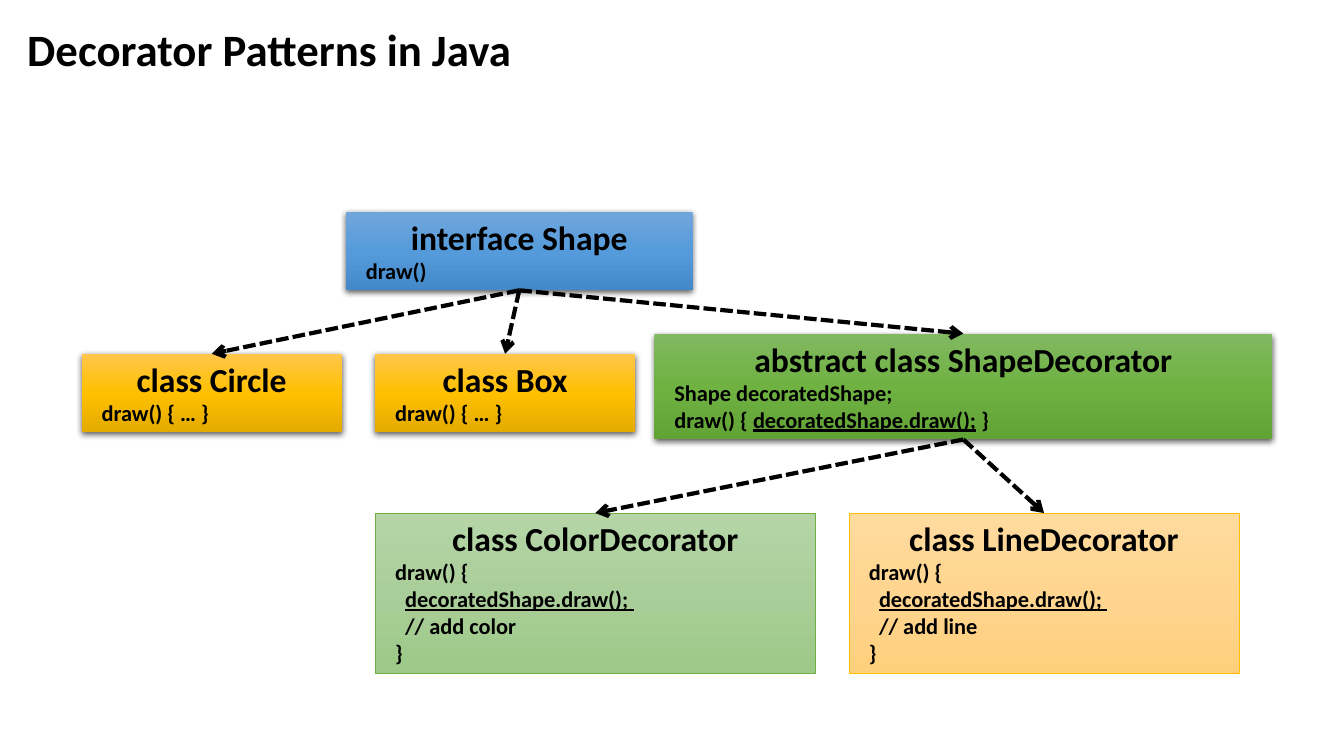
"""Build a slide with the class tree of the decorator pattern in Java."""
from copy import deepcopy

from lxml.etree import SubElement
from pptx import Presentation
from pptx.dml.color import RGBColor
from pptx.enum.dml import MSO_LINE
from pptx.enum.shapes import MSO_CONNECTOR, MSO_SHAPE
from pptx.enum.text import MSO_ANCHOR, MSO_AUTO_SIZE, PP_ALIGN
from pptx.oxml.ns import qn
from pptx.util import Inches, Pt

BLACK = RGBColor(0x00, 0x00, 0x00)
GOLD = RGBColor(0xFF, 0xC0, 0x00)
LEAF = RGBColor(0x70, 0xAD, 0x47)
BLUES = [RGBColor(0x71, 0xA6, 0xDB), RGBColor(0x55, 0x9B, 0xDB), RGBColor(0x44, 0x8A, 0xCA)]
GOLDS = [RGBColor(0xFF, 0xC6, 0x4B), GOLD, RGBColor(0xE3, 0xAB, 0x00)]
GREENS = [RGBColor(0x81, 0xB8, 0x61), RGBColor(0x6F, 0xB2, 0x42), RGBColor(0x62, 0xA3, 0x36)]
MINTS = [RGBColor(0xB5, 0xD5, 0xA7), RGBColor(0xAA, 0xCE, 0x9A), RGBColor(0x9C, 0xC9, 0x87)]
CREAMS = [RGBColor(0xFF, 0xDB, 0x9E), RGBColor(0xFF, 0xD5, 0x90), RGBColor(0xFF, 0xD0, 0x7C)]

TITLE = "Decorator Patterns in Java"
FONT = "Calibri"
HEAD, ROW, PAD, STEP = 0.41, 0.27, 0.1, 0.1
TOP, MID, LOW = 2.1, 3.51, 5.09
CALL = "_decoratedShape.draw();"


def body(note):
    return [(1, "draw() {"), (2, CALL + " _"), (2, note), (1, "}")]


BOXES = {
    "interface Shape": (3.43, TOP, 3.44, BLUES, None, [(1, "draw()")]),
    "class Circle": (0.81, MID, 2.58, GOLDS, None, [(1, "draw() { … }")]),
    "class Box": (3.72, MID, 2.58, GOLDS, None, [(1, "draw() { … }")]),
    "abstract class ShapeDecorator": (
        6.49, MID - 0.2, 6.13, GREENS, None,
        [(1, "Shape decoratedShape;"), (1, "draw() { " + CALL + "_ }")]),
    "class ColorDecorator": (3.72, LOW, 4.37, MINTS, LEAF, body("// add color")),
    "class LineDecorator": (8.42, LOW, 3.87, CREAMS, GOLD, body("// add line")),
}
TREE = {
    "interface Shape": ["class Circle", "class Box", "abstract class ShapeDecorator"],
    "abstract class ShapeDecorator": ["class ColorDecorator", "class LineDecorator"],
}


def style(run, size, line=False):
    font = run.font
    font.name, font.size, font.bold = FONT, Pt(size), True
    font.color.rgb = BLACK
    if line:
        font.underline = True


def shade(box, tones):
    box.fill.gradient()
    box.fill.gradient_angle = 270
    stops = box._element.spPr.find(qn("a:gradFill")).find(qn("a:gsLst"))
    stops.insert(1, deepcopy(stops[0]))
    for i, (stop, tone) in enumerate(zip(box.fill.gradient_stops, tones)):
        stop.color.rgb = tone
        stop.position = i / (len(tones) - 1)


def drop(box):
    glow = box._element.spPr.find(qn("a:effectLst"))
    cast = SubElement(glow, qn("a:outerShdw"), blurRad=str(Pt(4.5)), dist=str(Pt(1.5)),
                      dir="5400000", algn="ctr", rotWithShape="0")
    tone = SubElement(cast, qn("a:srgbClr"), val=str(BLACK))
    SubElement(tone, qn("a:alpha"), val="63000")


def draw(slide, name, left, top, width, tones, edge, lines):
    high = HEAD + ROW * len(lines) + PAD
    box = slide.shapes.add_shape(MSO_SHAPE.RECTANGLE, Inches(left), Inches(top),
                                 Inches(width), Inches(high))
    shade(box, tones)
    box.shadow.inherit = False
    if edge is None:
        box.line.fill.background()
        drop(box)
    else:
        box.line.color.rgb, box.line.width = edge, Pt(0.5)
    frame = box.text_frame
    frame.word_wrap = True
    frame.vertical_anchor = MSO_ANCHOR.TOP
    frame.auto_size = MSO_AUTO_SIZE.SHAPE_TO_FIT_TEXT
    head = frame.paragraphs[0]
    head.text, head.alignment = name, PP_ALIGN.CENTER
    style(head.runs[0], 24)
    for level, text in lines:
        para = frame.add_paragraph()
        para.alignment = PP_ALIGN.LEFT
        para._p.get_or_add_pPr().set("marL", str(Inches(STEP * level)))
        for i, part in enumerate(text.split("_")):
            if part:
                run = para.add_run()
                run.text = part
                style(run, 16, i % 2 == 1)
    return box


def link(slide, start, end):
    arrow = slide.shapes.add_connector(
        MSO_CONNECTOR.STRAIGHT, start.left + start.width // 2, start.top + start.height,
        end.left + end.width // 2, end.top)
    arrow.begin_connect(start, 2)
    arrow.end_connect(end, 0)
    arrow.line.color.rgb, arrow.line.width = BLACK, Pt(3)
    arrow.line.dash_style = MSO_LINE.SQUARE_DOT
    SubElement(arrow.line._get_or_add_ln(), qn("a:tailEnd"), type="arrow")
    SubElement(arrow._element.spPr, qn("a:effectLst"))


def main():
    deck = Presentation()
    deck.slide_width, deck.slide_height = Inches(13.33), Inches(7.5)
    slide = deck.slides.add_slide(deck.slide_layouts[5])
    title = slide.shapes.title
    title.left, title.top = Inches(0.17), Inches(0.16)
    title.width, title.height = Inches(13.03), Inches(0.71)
    title.text_frame.text = TITLE
    title.text_frame.vertical_anchor = MSO_ANCHOR.MIDDLE
    para = title.text_frame.paragraphs[0]
    para.alignment, para.line_spacing = PP_ALIGN.LEFT, 0.9
    style(para.runs[0], 32)
    boxes = {name: draw(slide, name, *spec) for name, spec in BOXES.items()}
    for base, kids in TREE.items():
        for kid in kids:
            link(slide, boxes[base], boxes[kid])
    deck.save("out.pptx")


if __name__ == "__main__":
    main()
